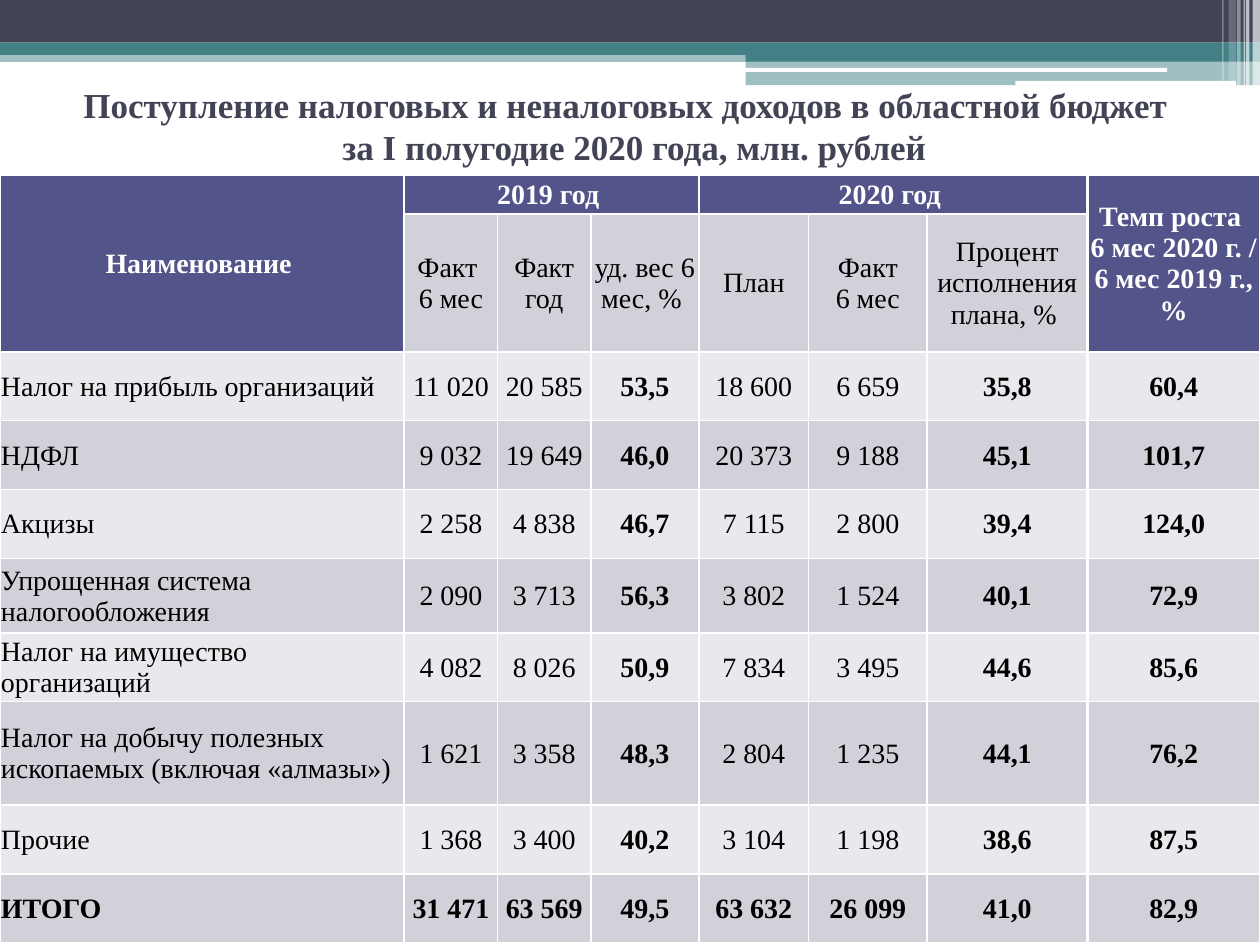
import lxml.etree
import pptx
import pptx.dml.color
import pptx.enum.shapes
import pptx.enum.text
import pptx.oxml.ns
import pptx.util

Cm, Pt = pptx.util.Cm, pptx.util.Pt
RGB = pptx.dml.color.RGBColor.from_string
qn = pptx.oxml.ns.qn
FORM = pptx.enum.shapes.MSO_SHAPE
ALIGN = pptx.enum.text.PP_ALIGN
MIDDLE = pptx.enum.text.MSO_ANCHOR.MIDDLE
HUES = {"dark": "424456", "teal": "438086", "head": "53548A", "odd": "D1D1DA",
        "even": "E9E9ED", "white": "FFFFFF", "black": "000000"}


def write(frame, text, size, hue, bold, align):
    """Add one paragraph, with a line break at each newline."""
    para = frame.paragraphs[0]
    para.alignment = align
    for i, line in enumerate(text.split("\n")):
        if i:
            para.add_line_break()
        run = para.add_run()
        run.text = line
        run.font.name = "Times New Roman"
        run.font.size = Pt(size)
        run.font.bold = bold
        run.font.color.rgb = RGB(HUES[hue])


def edge(cell, side, width):
    """Draw one white border of a cell."""
    line = lxml.etree.SubElement(cell._tc.get_or_add_tcPr(), qn("a:" + side),
                                 w=str(Pt(width)))
    fill = lxml.etree.SubElement(line, qn("a:solidFill"))
    lxml.etree.SubElement(fill, qn("a:srgbClr"), val=HUES["white"])


deck = pptx.Presentation()
deck.slide_width, deck.slide_height = Cm(25.4), Cm(19.05)
slide = deck.slides.add_slide(deck.slide_layouts[5])

# Top band: left, top, width, height, colour, opacity in percent
bars = [
    (0, 1.02, 25.4, 0.23, "teal", 50),
    (0, 0, 25.4, 0.86, "dark", 100),
    (0, 0.86, 25.4, 0.25, "teal", 100),
    (15.03, 0.99, 10.37, 0.25, "teal", 100),
    (15.03, 1.22, 10.37, 0.5, "teal", 50),
    (15.01, 1.37, 8.52, 0.08, "white", 100),
    (20.47, 1.63, 4.45, 0.1, "white", 100),
    (25.25, 0, 0.15, 1.73, "white", 65),
    (25.12, 0, 0.07, 1.73, "white", 65),
    (25.07, 0, 0.03, 1.73, "white", 60),
    (24.94, 0, 0.07, 1.73, "white", 40),
    (24.77, 0, 0.15, 1.63, "white", 20),
    (24.64, 0, 0.03, 1.63, "white", 30),
]
for left, top, wide, high, hue, alpha in bars:
    stripe = hue == "white" and alpha == 100
    form = FORM.ROUNDED_RECTANGLE if stripe else FORM.RECTANGLE
    bar = slide.shapes.add_shape(form, Cm(left), Cm(top), Cm(wide), Cm(high))
    bar.shadow.inherit = False
    bar.line.fill.background()
    bar.fill.solid()
    bar.fill.fore_color.rgb = RGB(HUES[hue])
    if alpha < 100:
        tone = next(bar.element.iter(qn("a:srgbClr")))
        lxml.etree.SubElement(tone, qn("a:alpha"), val=str(alpha * 1000))

# Title, placed in front of the band
title = slide.shapes.title
title.left, title.top, title.width, title.height = Cm(0), Cm(1.93), Cm(25.4), Cm(1.93)
frame = title.text_frame
frame.word_wrap = True
frame.auto_size = pptx.enum.text.MSO_AUTO_SIZE.NONE
frame.vertical_anchor = MIDDLE
frame.margin_top, frame.margin_bottom = Cm(0), Cm(0.75)
write(frame, "Поступление налоговых и неналоговых доходов в областной бюджет \n"
      " за I полугодие 2020 года, млн. рублей", 20, "dark", True, ALIGN.CENTER)
slide.shapes.element.append(title.element)

# Table content
rows = [
    ["Наименование ", "2019 год ", "", "", "2020 год ", "", "",
     "Темп роста \n6 мес 2020 г. / 6 мес 2019 г., %"],
    ["", "Факт \n6 мес", "Факт год", "уд. вес 6 мес, % ", "План", "Факт\n6 мес",
     "Процент исполнения плана, % ", ""],
    ["Налог на прибыль организаций", "11 020", "20 585", "53,5", "18 600", "6 659", "35,8", "60,4"],
    ["НДФЛ", "9 032", "19 649", "46,0", "20 373", "9 188", "45,1", "101,7"],
    ["Акцизы", "2 258", "4 838", "46,7", "7 115", "2 800", "39,4", "124,0"],
    ["Упрощенная система налогообложения",
     "2 090", "3 713", "56,3", "3 802", "1 524", "40,1", "72,9"],
    ["Налог на имущество организаций",
     "4 082", "8 026", "50,9", "7 834", "3 495", "44,6", "85,6"],
    ["Налог на добычу полезных ископаемых (включая «алмазы»)",
     "1 621", "3 358", "48,3", "2 804", "1 235", "44,1", "76,2"],
    ["Прочие", "1 368", "3 400", "40,2", "3 104", "1 198", "38,6", "87,5"],
    ["ИТОГО", "31 471", "63 569", "49,5", "63 632", "26 099", "41,0", "82,9"],
]
wides = [8.15, 1.88, 1.88, 2.18, 2.21, 2.39, 3.23, 3.48]
highs = [0.79, 2.77, 1.39, 1.39, 1.39, 1.5, 1.39, 2.08, 1.39, 1.39]
last = len(rows) - 1

# Table grid and merged headings
grid = slide.shapes.add_table(len(rows), len(wides), Cm(0), Cm(3.53),
                              Cm(sum(wides)), Cm(sum(highs))).table
grid.first_row = grid.horz_banding = False
for col, wide in zip(grid.columns, wides):
    col.width = Cm(wide)
for row, high in zip(grid.rows, highs):
    row.height = Cm(high)
for r1, c1, r2, c2 in [(0, 0, 1, 0), (0, 1, 0, 3), (0, 4, 0, 6), (0, 7, 1, 7)]:
    grid.cell(r1, c1).merge(grid.cell(r2, c2))

# Cells: thick borders part the header, the years and the total
for r, row in enumerate(rows):
    for c, text in enumerate(row):
        cell = grid.cell(r, c)
        for side, spot, thick in [("lnL", c, (0, 1, 4, 7, 8)), ("lnR", c + 1, (0, 1, 4, 7, 8)),
                                  ("lnT", r, (0, 1, 2, 10)), ("lnB", r + 1, (0, 1, 2, 10))]:
            edge(cell, side, 1.5 if r == 0 or spot in thick else 1)
        cell.fill.solid()
        shade = "head" if r == 0 or (r == 1 and c in (0, 7)) else "odd" if r % 2 else "even"
        cell.fill.fore_color.rgb = RGB(HUES[shade])
        cell.vertical_anchor = MIDDLE
        cell.margin_left = cell.margin_right = cell.margin_top = Cm(0.02)
        cell.margin_bottom = Cm(0)
        if text:
            bold = r in (0, last) or (r > 1 and c in (3, 6, 7))
            align = ALIGN.LEFT if c == 0 and r > 1 else ALIGN.CENTER
            write(cell.text_frame, text, 16, "black" if r else "white", bold, align)

deck.save("out.pptx")
